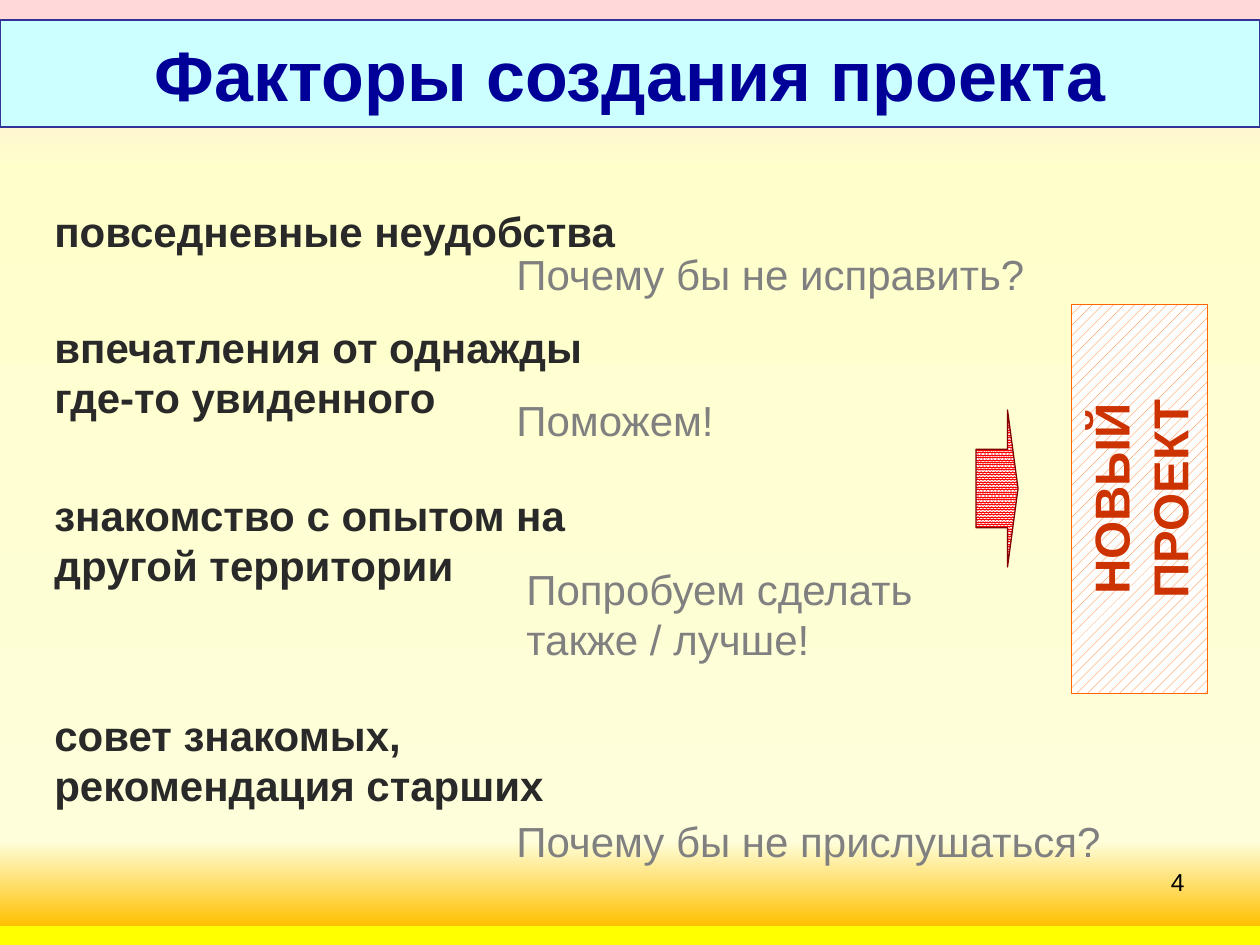
from copy import deepcopy
from typing import NamedTuple

from pptx import Presentation
from pptx.dml.color import RGBColor
from pptx.enum.dml import MSO_PATTERN
from pptx.enum.shapes import MSO_SHAPE
from pptx.enum.text import MSO_ANCHOR, MSO_AUTO_SIZE, PP_ALIGN
from pptx.util import Emu, Inches, Pt

PX = 914400 / 126
RECT, ARROW = MSO_SHAPE.RECTANGLE, MSO_SHAPE.RIGHT_ARROW
LIGHT, DENSE = MSO_PATTERN.PERCENT_20, MSO_PATTERN.PERCENT_90
LEFT, CENTER, RIGHT = PP_ALIGN.LEFT, PP_ALIGN.CENTER, PP_ALIGN.RIGHT
TOP, MIDDLE = MSO_ANCHOR.TOP, MSO_ANCHOR.MIDDLE
NO_FIT = MSO_AUTO_SIZE.NONE
STOPS = [(1, "FFD9D9"), (18, "FFFFCC"), (89, "FEFEDA"),
         (98, "FFC000"), (98, "FFFF00")]


class Box(NamedTuple):
    x: int
    y: int
    w: int
    h: int


class Note(NamedTuple):
    text: str
    box: Box


FACTORS = [
    Note("повседневные неудобства", Box(42, 199, 620, 63)),
    Note("впечатления от однажды где-то увиденного", Box(42, 315, 620, 113)),
    Note("знакомство с опытом на другой территории", Box(42, 483, 620, 113)),
    Note("совет знакомых, рекомендация старших", Box(42, 703, 620, 113)),
]
REPLIES = [
    Note("Почему бы не исправить?", Box(504, 242, 620, 63)),
    Note("Поможем!", Box(504, 388, 273, 63)),
    Note("Попробуем сделать также / лучше!", Box(514, 557, 483, 113)),
    Note("Почему бы не прислушаться?", Box(504, 809, 620, 63)),
]


def color(code: str) -> RGBColor:
    return RGBColor.from_string(code)


def emu(box: Box) -> list[Emu]:
    return [Emu(round(side * PX)) for side in box]


def write(shape, text: str, size: int, ink: str, bold: bool = False,
          align=LEFT, anchor=TOP) -> None:
    frame = shape.text_frame
    frame.word_wrap = True
    frame.auto_size = NO_FIT
    frame.vertical_anchor = anchor
    frame.margin_left = frame.margin_right = Inches(0.1)
    frame.margin_top = frame.margin_bottom = Inches(0.05)
    para = frame.paragraphs[0]
    para.alignment = align
    run = para.add_run()
    run.text = text
    font = run.font
    font.name, font.size, font.bold = "Arial", Pt(size), bold
    font.color.rgb = color(ink)


def label(slide, note: Note, size: int, ink: str, **style) -> None:
    write(slide.shapes.add_textbox(*emu(note.box)), note.text, size, ink, **style)


def edge(shape, ink: str, width: float) -> None:
    shape.line.color.rgb = color(ink)
    shape.line.width = Pt(width)


def hatch(slide, kind, box: Box, weave, fore: str, ink: str, width: float):
    shape = slide.shapes.add_shape(kind, *emu(box))
    shape.shadow.inherit = False
    shape.fill.patterned()
    shape.fill.pattern = weave
    shape.fill.fore_color.rgb = color(fore)
    shape.fill.back_color.rgb = color("FFFFFF")
    edge(shape, ink, width)
    return shape


def shade(slide) -> None:
    fill = slide.background.fill
    fill.gradient()
    fill.gradient_angle = 270
    first = fill.gradient_stops[0]
    first.color.rgb = color("FFFFFF")
    nodes = slide.background._cSld.xpath(".//a:gsLst")[0]
    seed = deepcopy(nodes[0])
    for node in list(nodes):
        nodes.remove(node)
    for _ in STOPS:
        nodes.append(deepcopy(seed))
    for stop, (place, code) in zip(fill.gradient_stops, STOPS):
        stop.position = place / 100
        stop.color.rgb = color(code)


def main() -> None:
    deck = Presentation()
    deck.slide_width, deck.slide_height = Inches(10), Inches(7.5)
    slide = deck.slides.add_slide(deck.slide_layouts[5])
    shade(slide)

    title = slide.shapes.title
    title.left, title.top, title.width, title.height = emu(Box(0, 20, 1260, 107))
    title.fill.solid()
    title.fill.fore_color.rgb = color("CCFFFF")
    edge(title, "333399", 0.75)
    write(title, "Факторы создания проекта", 40, "000099", bold=True,
          align=CENTER, anchor=MIDDLE)

    label(slide, Note("4", Box(903, 861, 294, 66)), 14, "000000", align=RIGHT)

    goal = hatch(slide, RECT, Box(945, 431, 389, 136), LIGHT, "FF6600", "FF6600", 0.5)
    goal.rotation = 270
    write(goal, "НОВЫЙ ПРОЕКТ", 28, "CC3300", bold=True, align=CENTER, anchor=MIDDLE)

    for note in FACTORS:
        label(slide, note, 24, "292929", bold=True)
    for note in REPLIES:
        label(slide, note, 24, "808080")

    arrow = hatch(slide, ARROW, Box(976, 410, 42, 157), DENSE, "FF0000", "800000", 0.75)
    arrow.adjustments[0], arrow.adjustments[1] = 0.5, 0.25

    deck.save("out.pptx")


if __name__ == "__main__":
    main()
